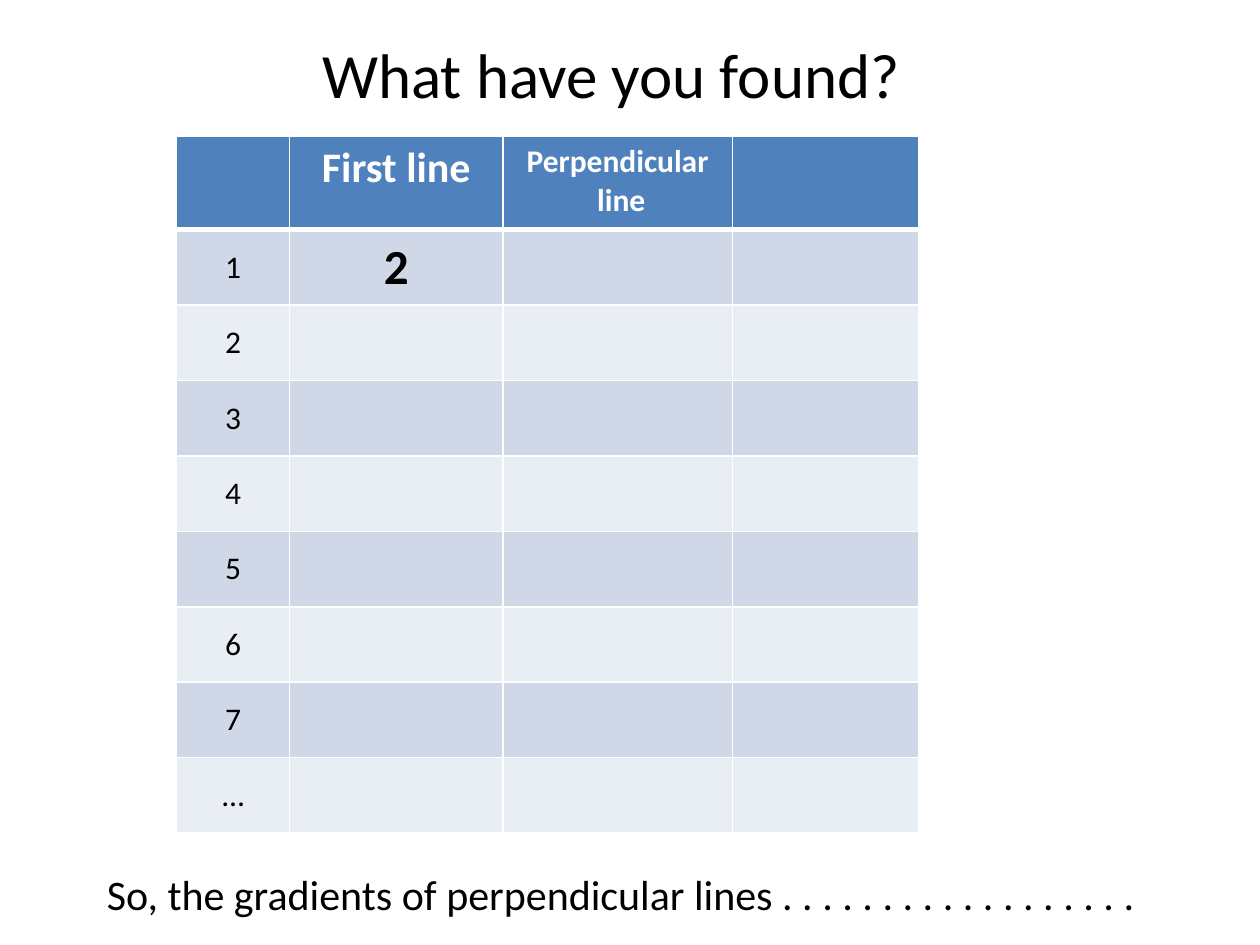
from lxml.etree import SubElement
from pptx import Presentation
from pptx.dml.color import RGBColor
from pptx.enum.text import MSO_ANCHOR as Anchor, MSO_AUTO_SIZE as AutoSize, PP_ALIGN as Align
from pptx.oxml.ns import qn
from pptx.util import Pt

BLACK = RGBColor(0x00, 0x00, 0x00)
WHITE = RGBColor(0xFF, 0xFF, 0xFF)
HEADER_BLUE = RGBColor(0x4F, 0x81, 0xBD)
BAND_DARK = RGBColor(0xD0, 0xD8, 0xE8)
BAND_LIGHT = RGBColor(0xE9, 0xED, 0xF4)

COL_WIDTHS = [64.5, 122, 131, 106.5]
HEADER_HEIGHT, ROW_HEIGHT = 53.3, 43.1
ROW_LABELS = ["1", "2", "3", "4", "5", "6", "7", "…"]


def write(tf, text, size, color=BLACK, bold=False, align=Align.LEFT):
    """Fill a text frame, one paragraph per line of text."""
    tf.text = text
    for p in tf.paragraphs:
        p.alignment = align
        font = p.runs[0].font
        font.color.rgb = color
        for name, value in dict(name="Calibri", size=Pt(size), bold=bold).items():
            setattr(font, name, value)


def add_label(s, text, size, left, top, width, height):
    tf = s.shapes.add_textbox(Pt(left), Pt(top), Pt(width), Pt(height)).text_frame
    tf.word_wrap = False
    tf.auto_size = AutoSize.SHAPE_TO_FIT_TEXT
    write(tf, text, size)


def set_borders(cell, widths):
    """Draw white borders; must run before the cell's fill is set."""
    tc_pr = cell._tc.get_or_add_tcPr()
    for side, width in widths.items():
        ln = SubElement(tc_pr, qn(f"a:ln{side}"), w=str(Pt(width)))
        SubElement(SubElement(ln, qn("a:solidFill")), qn("a:srgbClr"), val=str(WHITE))


def fill_cell(cell, color):
    cell.fill.solid()
    cell.fill.fore_color.rgb = color


def add_gradient_table(s, left, top):
    n_rows = len(ROW_LABELS) + 1
    height = HEADER_HEIGHT + ROW_HEIGHT * len(ROW_LABELS)
    table = s.shapes.add_table(n_rows, len(COL_WIDTHS), Pt(left), Pt(top),
                               Pt(sum(COL_WIDTHS)), Pt(height)).table
    for col, width in zip(table.columns, COL_WIDTHS):
        col.width = Pt(width)
    for i, row in enumerate(table.rows):
        row.height = Pt(ROW_HEIGHT if i else HEADER_HEIGHT)
        band = (BAND_DARK if i % 2 else BAND_LIGHT) if i else HEADER_BLUE
        for cell in row.cells:
            set_borders(cell, dict(L=1, R=1, T=3 if i == 1 else 1, B=1 if i else 3))
            fill_cell(cell, band)
            if i:
                cell.vertical_anchor = Anchor.MIDDLE

    for col, text, size in [(1, "First line", 24), (2, "Perpendicular\n line", 18)]:
        write(table.cell(0, col).text_frame, text, size, WHITE, True, Align.CENTER)
    for i, label in enumerate(ROW_LABELS, start=1):
        write(table.cell(i, 0).text_frame, label, 18, align=Align.CENTER)
    write(table.cell(1, 1).text_frame, "2", 28, bold=True, align=Align.CENTER)


def main():
    prs = Presentation()
    prs.slide_width, prs.slide_height = Pt(720), Pt(540)
    s = prs.slides.add_slide(prs.slide_layouts[6])
    add_label(s, "What have you found?", 36, 177, 16.5, 348, 51)
    add_gradient_table(s, 101, 78)
    add_label(s, "So, the gradients of perpendicular lines . . . . . . . . . . . . . . . . . .",
              24, 54, 493, 610, 36)
    prs.save("out.pptx")


if __name__ == "__main__":
    main()
